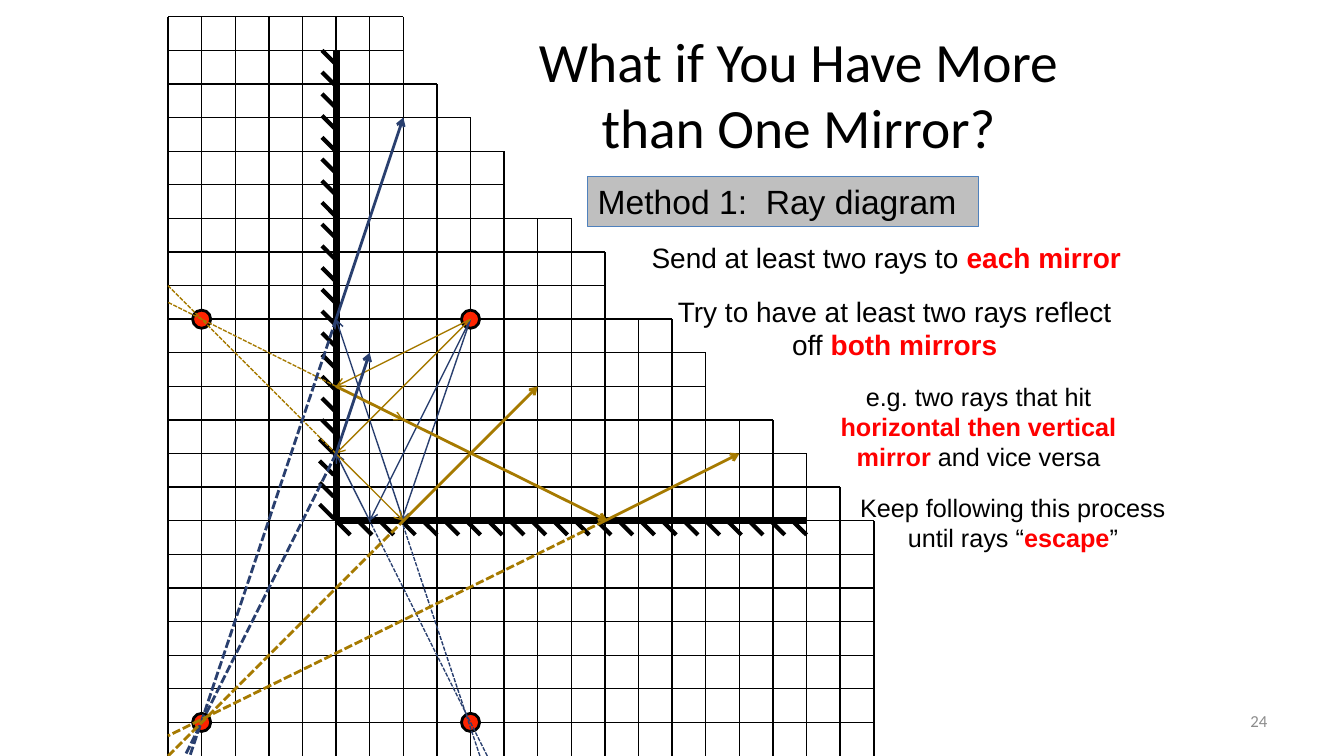
from lxml import etree
from pptx import Presentation
from pptx.dml.color import RGBColor
from pptx.enum.dml import MSO_LINE
from pptx.enum.shapes import MSO_CONNECTOR, MSO_SHAPE
from pptx.enum.text import MSO_ANCHOR, MSO_AUTO_SIZE, PP_ALIGN
from pptx.oxml.ns import qn
from pptx.util import Inches, Pt

BLACK = RGBColor(0x00, 0x00, 0x00)
RED = RGBColor(0xFF, 0x00, 0x00)
DOT_RED = RGBColor(0xFF, 0x24, 0x00)
NAVY = RGBColor(0x29, 0x3F, 0x6F)
BROWN = RGBColor(0xA6, 0x7A, 0x00)
GRAY = RGBColor(0xBF, 0xBF, 0xBF)
EDGE_BLUE = RGBColor(0x4F, 0x81, 0xBD)
NUMBER_GRAY = RGBColor(0x8C, 0x8C, 0x8C)

CELL = 1 / 3
LEFT, TOP = 5 / 3, 1 / 6
ROWS = 22

prs = Presentation()
prs.slide_width, prs.slide_height = Inches(13.33), Inches(7.5)
s = prs.slides.add_slide(prs.slide_layouts[5])


def line(start, end, color=BLACK, width=1, dashed=False, arrow=False):
    (x1, y1), (x2, y2) = [(Inches(LEFT + x * CELL), Inches(TOP + y * CELL))
                          for x, y in (start, end)]
    c = s.shapes.add_connector(MSO_CONNECTOR.STRAIGHT, x1, y1, x2, y2)
    c.line.color.rgb = color
    c.line.width = Pt(width)
    if dashed:
        c.line.dash_style = MSO_LINE.SQUARE_DOT
    if arrow:
        ln = c.line._get_or_add_ln()
        etree.SubElement(ln, qn("a:tailEnd")).set("type", "arrow")
    etree.SubElement(c._element.spPr, qn("a:effectLst"))


def write(sp, *parts, size, color=BLACK, font="Arial", align=PP_ALIGN.CENTER,
          anchor=MSO_ANCHOR.TOP):
    tf = sp.text_frame
    tf.word_wrap = True
    tf.auto_size = MSO_AUTO_SIZE.NONE
    tf.vertical_anchor = anchor
    p = tf.paragraphs[0]
    p.alignment = align
    for i, part in enumerate(parts):
        strong = i % 2 == 1
        r = p.add_run()
        r.text = part
        r.font.name = font
        r.font.size = Pt(size)
        r.font.bold = strong
        r.font.color.rgb = RED if strong else color


# Stepped grid: the first row of each column
column_tops = [0] * 8 + [2, 3, 4, 6, 6, 7, 9, 9, 10, 12, 12, 13, 14, 15]
for col, top in enumerate(column_tops):
    line((col, top), (col, ROWS))
for row in range(ROWS):
    last = max(col for col, top in enumerate(column_tops) if top <= row)
    line((0, row), (last, row))

# Mirrors with hatching
corner = (5, 15)
tick, pitch = 0.42, 13.58 / 21
line(corner, (19, 15), width=5)
line(corner, (5, 1), width=5)
for k in range(22):
    x = 5 + k * pitch
    line((x, 15), (x + tick, 15 + tick), width=3)
    slip = 0.07 if k >= 18 else 0
    x, y = 5 - slip, 1 + tick + k * pitch - slip
    line((x, y), (x - tick, y - tick), width=3)

# Object and its images
size = 0.18
for col, row in [(9, 9), (9, 21), (1, 9), (1, 21)]:
    sp = s.shapes.add_shape(MSO_SHAPE.OVAL, Inches(LEFT + col * CELL - size / 2),
                            Inches(TOP + row * CELL - size / 2), Inches(size), Inches(size))
    sp.shadow.inherit = False
    sp.fill.solid()
    sp.fill.fore_color.rgb = DOT_RED
    sp.line.color.rgb = BLACK
    sp.line.width = Pt(2)

# Rays: colour, width, dashed, segments
rays = [
    (NAVY, 1, False, [((9, 9), (6, 15)), ((6, 15), (5, 13)),
                      ((9, 9), (6.95, 15)), ((7, 15), (5, 9))]),
    (BROWN, 1, False, [((5, 11), (7, 12)), ((9, 9), (5, 11)),
                       ((9, 9), (5, 13)), ((5, 13), (7, 15))]),
    (NAVY, 1, True, [((9.5, 22), (6, 15)), ((9.28, 22), (6.95, 15))]),
    (BROWN, 1, True, [((5, 11), (0, 8.5)), ((0, 8), (5, 13))]),
    (NAVY, 2, True, [((5, 13), (0.5, 22)), ((5, 9), (0.65, 22))]),
    (BROWN, 2, True, [((13, 15), (0, 21.4)), ((0, 22), (7, 15))]),
    (BROWN, 2, False, [((5, 11), (13.07, 15)), ((13, 15), (17, 13)), ((7, 15), (11, 11))]),
    (NAVY, 2, False, [((5, 9), (7, 3)), ((5, 13), (6, 10))]),
]
for color, width, dashed, segments in rays:
    for start, end in segments:
        line(start, end, color, width, dashed, arrow=not dashed)

title = s.shapes.title
title.left, title.top = Inches(4.67), Inches(0.3)
title.width, title.height = Inches(6.5), Inches(1.25)
write(title, "What if You Have More than One Mirror?", size=39.6, font="Calibri",
      anchor=MSO_ANCHOR.MIDDLE)

method = s.shapes.add_shape(MSO_SHAPE.RECTANGLE, Inches(5.83), Inches(1.75),
                            Inches(3.88), Inches(0.5))
method.shadow.inherit = False
method.fill.solid()
method.fill.fore_color.rgb = GRAY
method.line.color.rgb = EDGE_BLUE
method.line.width = Pt(0.75)
write(method, "Method 1:  Ray diagram", size=24, align=PP_ALIGN.LEFT)

notes = [
    (6.33, 2.34, 4.92, 0.44, 20, ["Send at least two rays to ", "each mirror"]),
    (6.5, 2.87, 4.75, 0.77, 20,
     ["Try to have at least two rays reflect off ", "both mirrors"]),
    (8.08, 3.73, 3.25, 1.01, 18,
     ["e.g. two rays that hit ", "horizontal then vertical mirror ", "and vice versa"]),
    (8.42, 4.83, 3.25, 0.71, 18,
     ["Keep following this process until rays “", "escape", "”"]),
]
for x, y, w, h, pts, parts in notes:
    sp = s.shapes.add_textbox(Inches(x), Inches(y), Inches(w), Inches(h))
    write(sp, *parts, size=pts)

number = s.shapes.add_textbox(Inches(9.56), Inches(6.95), Inches(3.11), Inches(0.4))
write(number, "24", size=12, color=NUMBER_GRAY, font="Calibri", align=PP_ALIGN.RIGHT,
      anchor=MSO_ANCHOR.MIDDLE)

prs.save("out.pptx")
